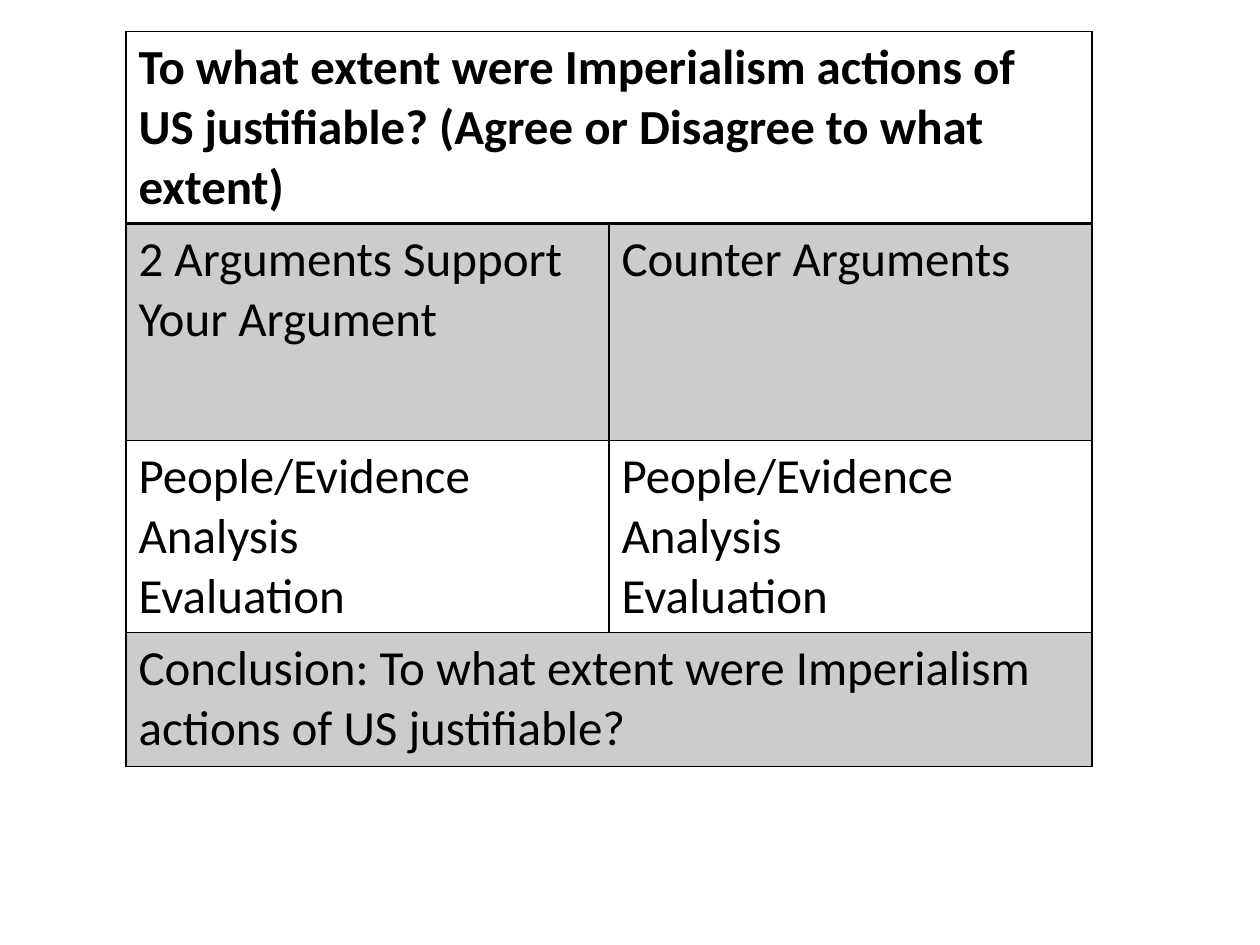
from dataclasses import dataclass

from lxml.etree import SubElement
from pptx import Presentation
from pptx.dml.color import RGBColor as Rgb
from pptx.oxml.ns import qn
from pptx.util import Inches, Pt


@dataclass(frozen=True)
class Theme:
    font: str = "Calibri"
    text_size: int = 28
    ink: str = "000000"
    shade_alpha: int = 20
    border: int = 1
    heading_rule: int = 2


THEME = Theme()
SLIDE_WIDTH, SLIDE_HEIGHT = Inches(10), Inches(7.5)
TABLE_LEFT, TABLE_TOP = 0.1, 1 / 30  # shares of the slide
TABLE_WIDTH = 23 / 30
COLUMN_COUNT = 2

EVIDENCE = "People/Evidence\nAnalysis\nEvaluation"
# Row height in inches, shaded, cell texts; a single text spans the row
ROWS = [
    (1.52, False, ["To what extent were Imperialism actions of US justifiable? "
                   "(Agree or Disagree to what extent)"]),
    (1.72, True, ["2 Arguments Support Your Argument", "Counter Arguments"]),
    (1.52, False, [EVIDENCE] * COLUMN_COUNT),
    (1.06, True, ["Conclusion: To what extent were Imperialism actions of US justifiable?"]),
]


def add_color(parent, alpha=None):
    """Add a solid ink fill, with an optional opacity in percent."""
    fill = SubElement(parent, qn("a:solidFill"))
    color = SubElement(fill, qn("a:srgbClr"), val=THEME.ink)
    if alpha is not None:
        SubElement(color, qn("a:alpha"), val=str(alpha * 1000))


def style_cell(cell, row_index, shaded):
    """Draw the four borders, then the fill, as the schema orders them."""
    properties = cell._tc.get_or_add_tcPr()
    rule_side = {0: "B", 1: "T"}.get(row_index)
    for side in "LRTB":
        width = THEME.heading_rule if side == rule_side else THEME.border
        line = SubElement(properties, qn(f"a:ln{side}"), w=str(Pt(width)))
        add_color(line)
    if shaded:
        add_color(properties, THEME.shade_alpha)
    else:
        cell.fill.background()


def write_text(cell, text, bold):
    cell.text_frame.text = text
    for paragraph in cell.text_frame.paragraphs:
        for run in paragraph.runs:
            font = run.font
            font.name = THEME.font
            font.size = Pt(THEME.text_size)
            font.bold = bold
            font.color.rgb = Rgb.from_string(THEME.ink)


def add_argument_table(slide):
    height = Inches(sum(row[0] for row in ROWS))
    table = slide.shapes.add_table(
        len(ROWS), COLUMN_COUNT,
        int(SLIDE_WIDTH * TABLE_LEFT), int(SLIDE_HEIGHT * TABLE_TOP),
        int(SLIDE_WIDTH * TABLE_WIDTH), height).table
    table.first_row = table.horz_banding = False

    for row_index, (row_height, shaded, texts) in enumerate(ROWS):
        table.rows[row_index].height = Inches(row_height)
        for column in range(COLUMN_COUNT):
            style_cell(table.cell(row_index, column), row_index, shaded)
        if len(texts) == 1:
            table.cell(row_index, 0).merge(table.cell(row_index, COLUMN_COUNT - 1))
        for column, text in enumerate(texts):
            write_text(table.cell(row_index, column), text, bold=row_index == 0)


def main():
    presentation = Presentation()
    presentation.slide_width, presentation.slide_height = SLIDE_WIDTH, SLIDE_HEIGHT
    slide = presentation.slides.add_slide(presentation.slide_layouts[6])
    add_argument_table(slide)
    presentation.save("out.pptx")


if __name__ == "__main__":
    main()
